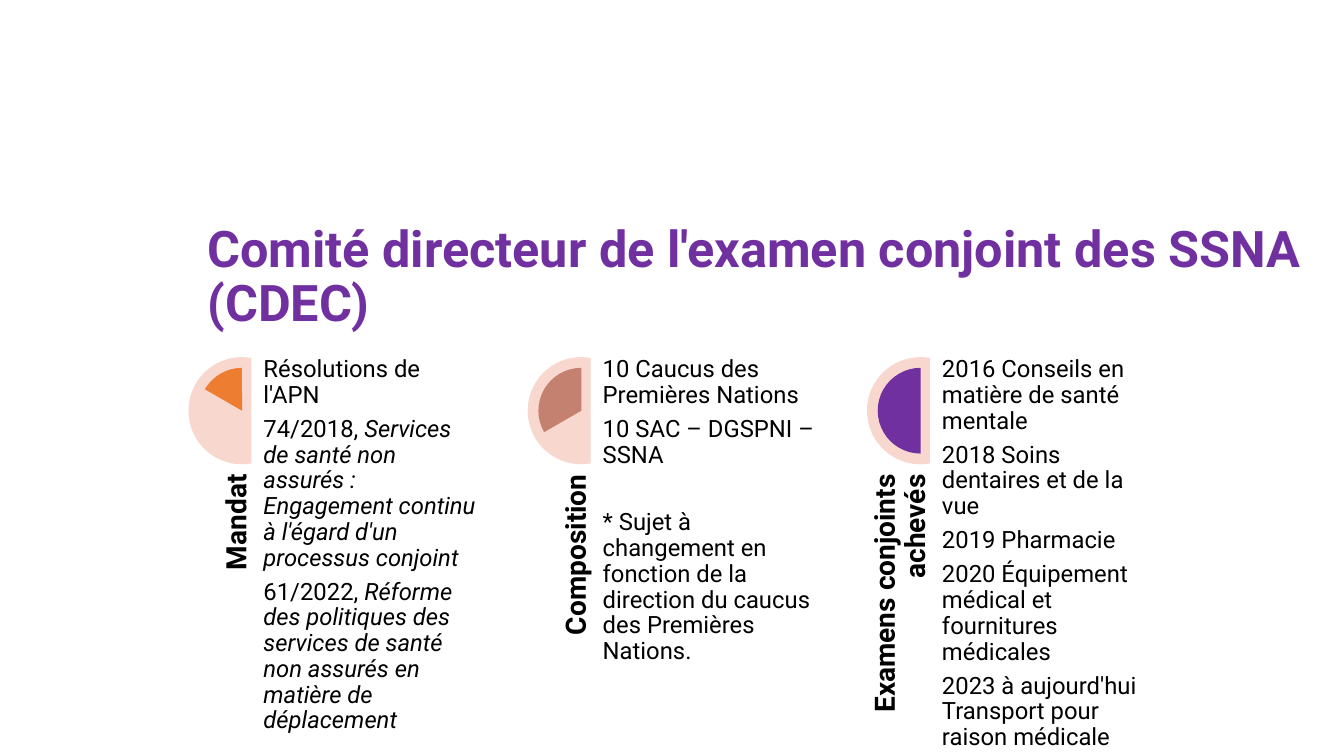
from pptx import Presentation
from pptx.dml.color import RGBColor as Rgb
from pptx.enum.shapes import MSO_SHAPE as Kind
from pptx.enum.text import MSO_ANCHOR as Anchor, PP_ALIGN as Align
from pptx.util import Cm, Pt

LEFT, TOP, STEP = 4.75, 9, 8.55
DISC, PIE = 2.7, 2.16
BLACK, PURPLE, PEACH = "000000", "7030A0", "F8D7CE"

PARTS = [
    ("Mandat", "ED7D31", 126, [
        ["Résolutions de l'APN"],
        ["74/2018, ", "Services de santé non assurés : Engagement continu "
         "à l'égard d'un processus conjoint"],
        ["61/2022, ", "Réforme des politiques des services de santé non "
         "assurés en matière de déplacement"],
    ]),
    ("Composition", "C48170", 90, [
        ["10 Caucus des Premières Nations"],
        ["10 SAC – DGSPNI – SSNA"],
        ["* Sujet à changement en fonction de la direction du caucus des "
         "Premières Nations."],
    ]),
    ("Examens conjoints achevés", PURPLE, 54, [
        ["2016 Conseils en matière de santé mentale"],
        ["2018 Soins dentaires et de la vue"],
        ["2019 Pharmacie"],
        ["2020 Équipement médical et fournitures médicales"],
        ["2023 à aujourd'hui Transport pour raison médicale"],
    ]),
]


def color(code):
    """Turn a hex string into a colour."""
    return Rgb.from_string(code)


def add_arc(slide, kind, x, y, size, fill, start, end):
    """Draw a round shape cut between two angles."""
    arc = slide.shapes.add_shape(kind, Cm(x), Cm(y), Cm(size), Cm(size))
    arc.shadow.inherit = False
    arc.adjustments[0], arc.adjustments[1] = start, end
    arc.fill.solid()
    arc.fill.fore_color.rgb = color(fill)
    arc.line.fill.background()


def add_box(slide, x, y, wide, high, inset=True):
    """Add a wrapping text box and return it."""
    box = slide.shapes.add_textbox(Cm(x), Cm(y), Cm(wide), Cm(high))
    frame = box.text_frame
    frame.word_wrap = True
    if not inset:
        frame.margin_left = frame.margin_right = Cm(0)
        frame.margin_top = frame.margin_bottom = Cm(0)
    return box


def add_run(para, text, size, fill=BLACK, bold=False, slant=False):
    """Add one styled run to a paragraph."""
    para.line_spacing = 0.9
    run = para.add_run()
    run.text = text
    font = run.font
    font.name, font.size = "Roboto", Pt(size)
    font.bold, font.italic = bold, slant
    font.color.rgb = color(fill)


def add_label(slide, x, text):
    """Add a heading that reads upwards."""
    box = add_box(slide, x, 15.04, 7.8, 1.63, inset=False)
    box.rotation = 270
    frame = box.text_frame
    frame.vertical_anchor = Anchor.BOTTOM
    para = frame.paragraphs[0]
    para.alignment = Align.RIGHT
    add_run(para, text, 20, bold=True)


def add_body(slide, x, items):
    """Add the paragraphs of one column."""
    frame = add_box(slide, x, TOP, 5.38, 10.77, inset=False).text_frame
    for num, texts in enumerate(items):
        para = frame.add_paragraph() if num else frame.paragraphs[0]
        para.space_after = Pt(6)
        if texts[0].startswith("*"):
            para.space_before = Pt(24)
        for pos, text in enumerate(texts):
            add_run(para, text, 17, slant=pos > 0)


def add_part(slide, x, label, fill, start, items):
    """Add one column with its dial, heading and text."""
    gap = (DISC - PIE) / 2
    add_arc(slide, Kind.CHORD, x, TOP, DISC, PEACH, 48, 168)
    add_arc(slide, Kind.PIE, x + gap, TOP + gap, PIE, fill, start, 162)
    add_label(slide, x - 3.1, label)
    add_body(slide, x + 1.89, items)


def main():
    """Build the slide and save it."""
    deck = Presentation()
    deck.slide_width, deck.slide_height = Cm(33.87), Cm(19.05)
    slide = deck.slides.add_slide(deck.slide_layouts[6])
    for num, part in enumerate(PARTS):
        add_part(slide, LEFT + num * STEP, *part)
    title = add_box(slide, 4.98, 5.51, 28.42, 3.15)
    add_run(title.text_frame.paragraphs[0],
            "Comité directeur de l'examen conjoint des SSNA (CDEC)",
            36, PURPLE, bold=True)
    deck.save("out.pptx")


if __name__ == "__main__":
    main()
